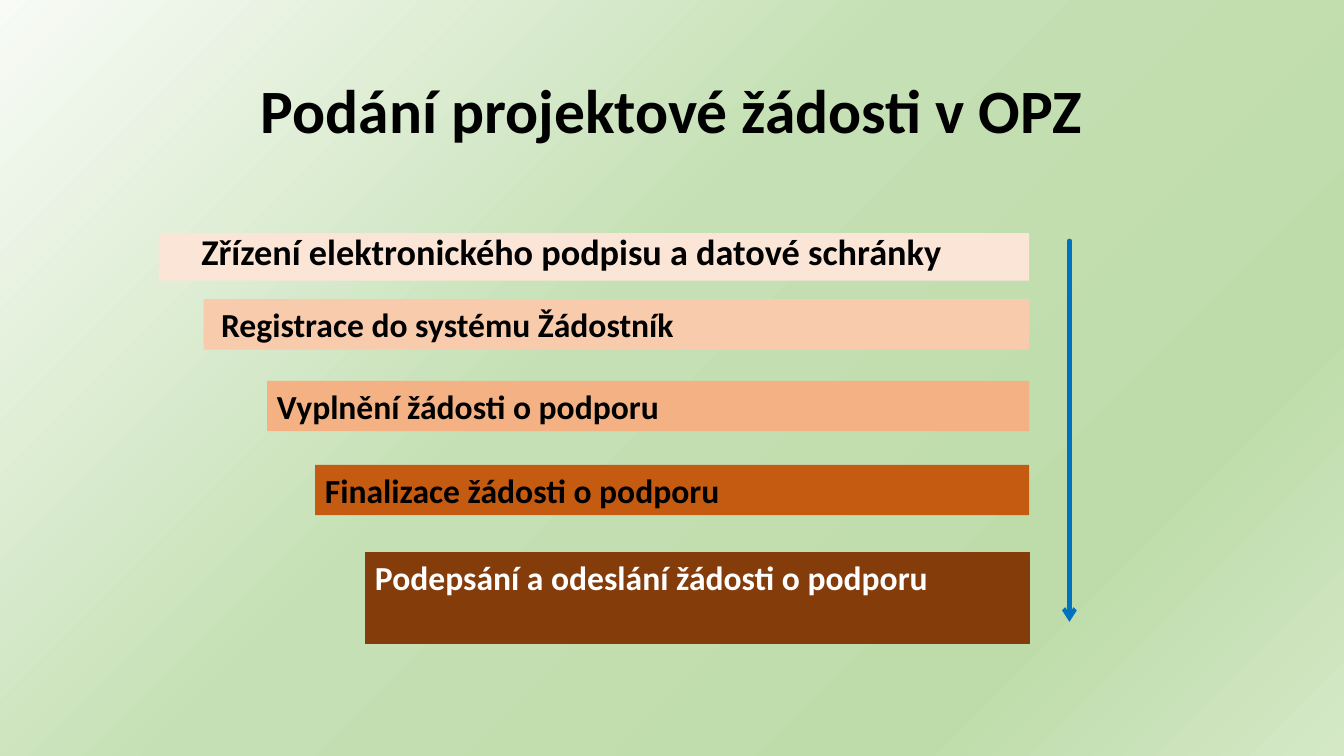
from dataclasses import dataclass
from typing import Any

from lxml.etree import SubElement
from pptx import Presentation
from pptx.dml.color import RGBColor as RGB
from pptx.enum.shapes import MSO_CONNECTOR as CONN, MSO_SHAPE as SHAPE
from pptx.enum.text import MSO_ANCHOR as ANCHOR, PP_ALIGN as ALIGN
from pptx.oxml.ns import qn
from pptx.util import Pt

COLORS = {
    "text": "000000",
    "light_text": "FFFFFF",
    "sign": "FBE5D6",
    "register": "F8CBAD",
    "fill_in": "F4B183",
    "finalize": "C55A11",
    "send": "843C0B",
    "arrow": "0070C0",
}
BACKGROUND = [(0, "F8FBF6"), (44, "C5E0B4"), (79, "BEDCAA"), (100, "D4E8C6")]
FONT = {"name": "Calibri", "bold": True}
BAR_RIGHT = 735.1


@dataclass
class Bar:
    text: str
    color: str
    left: float
    top: float
    height: float = 36
    size: float = 24
    indent: float = 0
    font_color: str = "text"
    line_spacing: float = 1.0
    space_before: float = 0
    outlined: bool = False


BARS = [
    Bar("Zřízení elektronického podpisu a datové schránky", "sign", 113.3, 166.5,
        height=34, size=25.9, indent=23.4, line_spacing=0.8, space_before=10),
    Bar("Registrace do systému Žádostník", "register", 145.4, 213.7, indent=5.4),
    Bar("Vyplnění žádosti o podporu", "fill_in", 190.8, 272),
    Bar("Finalizace žádosti o podporu", "finalize", 225, 332),
    Bar("Podepsání a odeslání žádosti o podporu", "send", 260.8, 394.5,
        height=65.5, font_color="light_text", outlined=True),
]


def rgb(name: str) -> RGB:
    return RGB.from_string(COLORS[name])


def apply(target: Any, values: dict[str, Any]) -> None:
    for name, value in values.items():
        setattr(target, name, value)


def write(sp: Any, text: str, size: float, color: str,
          frame: dict[str, Any], paragraph: dict[str, Any]) -> Any:
    tf = sp.text_frame
    apply(tf, {"word_wrap": True, **frame})
    p = tf.paragraphs[0]
    apply(p, paragraph)
    r = p.add_run()
    r.text = text
    apply(r.font, {**FONT, "size": Pt(size)})
    r.font.color.rgb = rgb(color)
    return p


def paint_background(s: Any) -> None:
    fill = s.background.fill
    fill.gradient()
    fill.gradient_angle = 315
    stops = s.element.find(".//" + qn("a:gsLst"))
    for stop in list(stops):
        stops.remove(stop)
    for position, color in BACKGROUND:
        stop = SubElement(stops, qn("a:gs"), pos=str(position * 1000))
        SubElement(stop, qn("a:srgbClr"), val=color)


def add_title(s: Any, text: str) -> None:
    sp = s.shapes.add_textbox(Pt(66), Pt(28.8), Pt(828), Pt(104.4))
    write(sp, text, 44, "text", {"vertical_anchor": ANCHOR.MIDDLE},
          {"alignment": ALIGN.CENTER, "line_spacing": 0.9})


def add_bar(s: Any, bar: Bar) -> None:
    sp = s.shapes.add_shape(SHAPE.RECTANGLE, Pt(bar.left), Pt(bar.top),
                            Pt(BAR_RIGHT - bar.left), Pt(bar.height))
    sp.shadow.inherit = False
    sp.fill.solid()
    sp.fill.fore_color.rgb = rgb(bar.color)
    if bar.outlined:
        sp.line.color.rgb = rgb(bar.color)
        sp.line.width = Pt(0.75)
    else:
        sp.line.fill.background()
    p = write(sp, bar.text, bar.size, bar.font_color,
              {"vertical_anchor": ANCHOR.TOP},
              {"alignment": ALIGN.LEFT, "line_spacing": bar.line_spacing,
               "space_before": Pt(bar.space_before)})
    p._p.get_or_add_pPr().set("marL", str(Pt(bar.indent)))


def add_arrow(s: Any, x: float, top: float, bottom: float) -> None:
    sp = s.shapes.add_connector(CONN.STRAIGHT, Pt(x), Pt(top), Pt(x), Pt(bottom))
    sp.line.color.rgb = rgb("arrow")
    sp.line.width = Pt(3)
    ln = sp.line._get_or_add_ln()
    ln.set("cap", "rnd")
    SubElement(ln, qn("a:tailEnd"), type="arrow")
    SubElement(sp._element.spPr, qn("a:effectLst"))


def main() -> None:
    prs = Presentation()
    apply(prs, {"slide_width": Pt(960), "slide_height": Pt(540)})
    s = prs.slides.add_slide(prs.slide_layouts[6])
    paint_background(s)
    add_title(s, "Podání projektové žádosti v OPZ")
    for bar in BARS:
        add_bar(s, bar)
    add_arrow(s, 763.9, 172, 444.2)
    prs.save("out.pptx")


if __name__ == "__main__":
    main()
